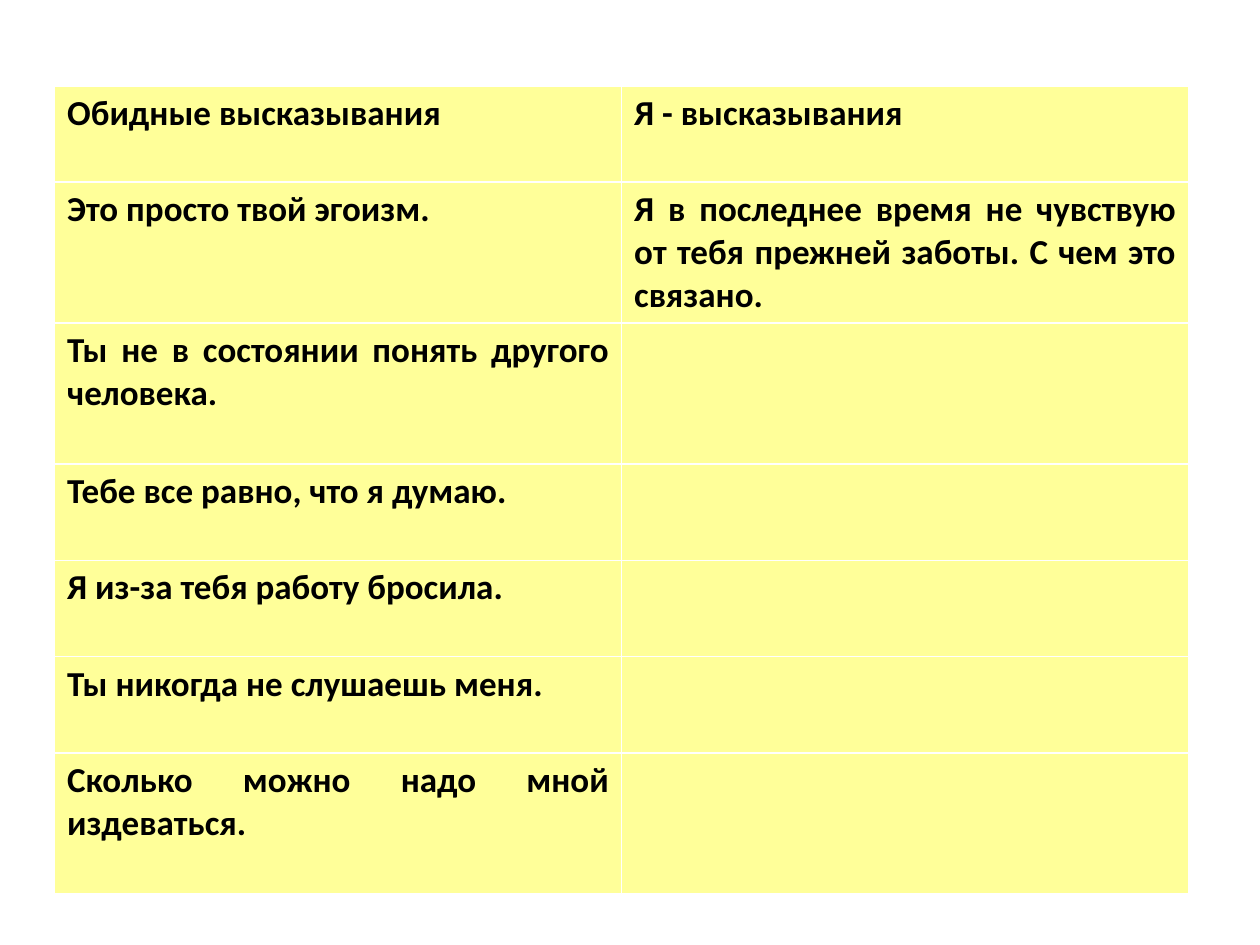
from pptx import Presentation
from pptx.dml.color import RGBColor
from pptx.enum.text import PP_ALIGN
from pptx.util import Pt

JUSTIFY = PP_ALIGN.JUSTIFY
COLORS = {"cell": "FFFF99", "text": "000000"}
FONT = "Calibri"
SHORT_ROW, TALL_ROW = 55, 80.5
ROWS = [
    (SHORT_ROW, "Обидные высказывания", "Я - высказывания"),
    (TALL_ROW, "Это просто твой эгоизм.",
     "Я в последнее время не чувствую от тебя прежней заботы. С чем это связано."),
    (TALL_ROW, "Ты не в состоянии понять другого человека.", ""),
    (SHORT_ROW, "Тебе все равно, что я думаю.", ""),
    (SHORT_ROW, "Я из-за тебя работу бросила.", ""),
    (SHORT_ROW, "Ты никогда не слушаешь меня.", ""),
    (TALL_ROW, "Сколько можно надо мной издеваться.", ""),
]


def fill_cell(cell, text):
    """Colour a cell and write its bold, justified statement."""
    cell.fill.solid()
    cell.fill.fore_color.rgb = RGBColor.from_string(COLORS["cell"])
    para = cell.text_frame.paragraphs[0]
    para.alignment = JUSTIFY
    if text:
        span = para.add_run()
        span.text = text
        span.font.name = FONT
        span.font.size = Pt(20)
        span.font.bold = True
        span.font.color.rgb = RGBColor.from_string(COLORS["text"])


def add_statements(page, left, top, width):
    """Place the two-column table of statements."""
    total = sum(height for height, *_ in ROWS)
    table = page.shapes.add_table(
        len(ROWS), 2, Pt(left), Pt(top), Pt(width), Pt(total)).table
    table.horz_banding = False
    for column in table.columns:
        column.width = Pt(width / 2)
    for row, (height, *texts) in zip(table.rows, ROWS):
        row.height = Pt(height)
        for cell, text in zip(row.cells, texts):
            fill_cell(cell, text)


def main():
    """Build the deck and save it."""
    deck = Presentation()
    deck.slide_width, deck.slide_height = Pt(720), Pt(540)
    page = deck.slides.add_slide(deck.slide_layouts[6])
    add_statements(page, 31.2, 49, 648)
    deck.save("out.pptx")


if __name__ == "__main__":
    main()
